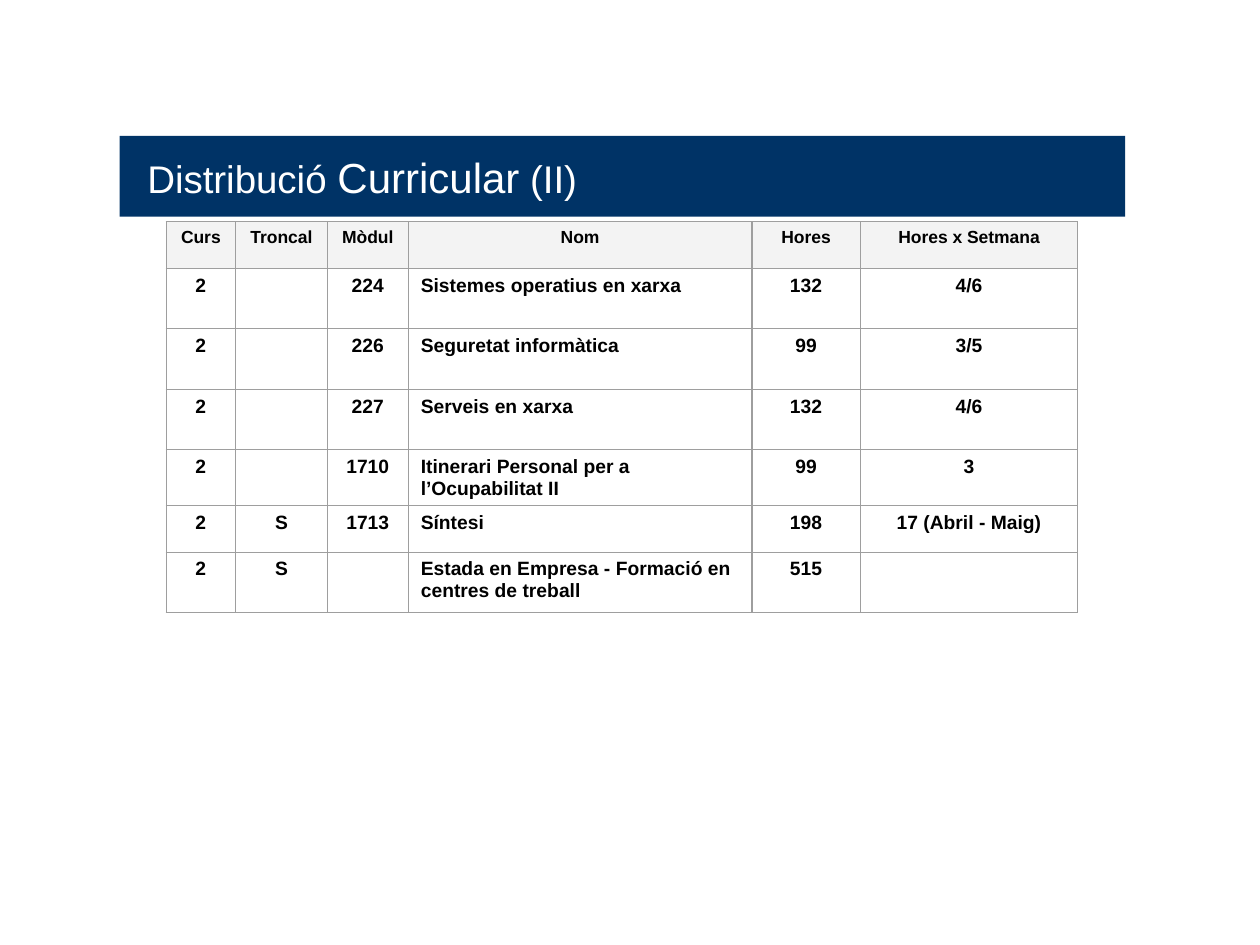
from lxml import etree
from pptx import Presentation
from pptx.dml.color import RGBColor
from pptx.enum.text import MSO_ANCHOR, MSO_AUTO_SIZE, PP_ALIGN
from pptx.oxml.ns import qn
from pptx.util import Cm, Pt

NAVY = RGBColor(0x00, 0x33, 0x66)
WHITE = RGBColor(0xFF, 0xFF, 0xFF)
BLACK = RGBColor(0x00, 0x00, 0x00)
HEADER_GREY = RGBColor(0xF3, 0xF3, 0xF3)
BORDER_GREY = RGBColor(0x9E, 0x9E, 0x9E)
LEFT, CENTER = PP_ALIGN.LEFT, PP_ALIGN.CENTER
MIDDLE, NO_AUTOFIT = MSO_ANCHOR.MIDDLE, MSO_AUTO_SIZE.NONE
TITLE_ONLY = 5

BANNER_BOX = (2.41, 2.74, 20.27, 1.63)
TITLE_PARTS = [("Distribució ", 22), ("Curricular", 24), (" (II)", 22)]

TABLE_POSITION = (3.35, 4.47)
COLUMN_WIDTHS = [1.4, 1.85, 1.63, 6.93, 2.18, 4.39]
ROW_HEIGHTS = [0.94, 1.22, 1.22, 1.22, 1.11, 0.94, 1.22]
NAME_COLUMN = 3
MODULES = [
    ("Curs", "Troncal", "Mòdul", "Nom", "Hores", "Hores x Setmana"),
    ("2", "", "224", "Sistemes operatius en xarxa", "132", "4/6"),
    ("2", "", "226", "Seguretat informàtica", "99", "3/5"),
    ("2", "", "227", "Serveis en xarxa", "132", "4/6"),
    ("2", "", "1710", "Itinerari Personal per a l’Ocupabilitat II", "99", "3"),
    ("2", "S", "1713", "Síntesi", "198", "17 (Abril - Maig)"),
    ("2", "S", "", "Estada en Empresa - Formació en centres de treball", "515", ""),
]


def add_text(para, text, size, color=BLACK, bold=False, align=LEFT):
    para.alignment = align
    span = para.add_run()
    span.text = text
    span.font.name = "Arial"
    span.font.size = Pt(size)
    span.font.bold = bold
    span.font.color.rgb = color


def set_borders(cell, color, width):
    properties = cell._tc.get_or_add_tcPr()
    for side in ("a:lnL", "a:lnR", "a:lnT", "a:lnB"):
        line = etree.SubElement(properties, qn(side), w=str(Pt(width)))
        fill = etree.SubElement(line, qn("a:solidFill"))
        etree.SubElement(fill, qn("a:srgbClr"), val=str(color))


def add_banner(page, left, top, width, height):
    banner = page.shapes.title
    banner.left, banner.top = Cm(left), Cm(top)
    banner.width, banner.height = Cm(width), Cm(height)
    banner.fill.solid()
    banner.fill.fore_color.rgb = NAVY
    frame = banner.text_frame
    frame.auto_size = NO_AUTOFIT
    frame.vertical_anchor = MIDDLE
    frame.margin_left = Cm(0.56)
    for text, size in TITLE_PARTS:
        add_text(frame.paragraphs[0], text, size, color=WHITE)


def add_module_table(page, left, top):
    frame = page.shapes.add_table(
        len(MODULES), len(COLUMN_WIDTHS), Cm(left), Cm(top),
        Cm(sum(COLUMN_WIDTHS)), Cm(sum(ROW_HEIGHTS)))
    table = frame.table
    for column, width in zip(table.columns, COLUMN_WIDTHS):
        column.width = Cm(width)
    for row, height in zip(table.rows, ROW_HEIGHTS):
        row.height = Cm(height)
    for row_index, values in enumerate(MODULES):
        is_header = row_index == 0
        for column_index, value in enumerate(values):
            cell = table.cell(row_index, column_index)
            set_borders(cell, BORDER_GREY, 0.75)
            if is_header:
                cell.fill.solid()
                cell.fill.fore_color.rgb = HEADER_GREY
            else:
                cell.fill.background()
            if value:
                is_name = column_index == NAME_COLUMN and not is_header
                add_text(cell.text_frame.paragraphs[0], value,
                         10 if is_header else 11, bold=True,
                         align=LEFT if is_name else CENTER)


def main():
    deck = Presentation()
    deck.slide_width, deck.slide_height = Cm(25.4), Cm(19.05)
    page = deck.slides.add_slide(deck.slide_layouts[TITLE_ONLY])
    add_banner(page, *BANNER_BOX)
    add_module_table(page, *TABLE_POSITION)
    deck.save("out.pptx")


if __name__ == "__main__":
    main()
